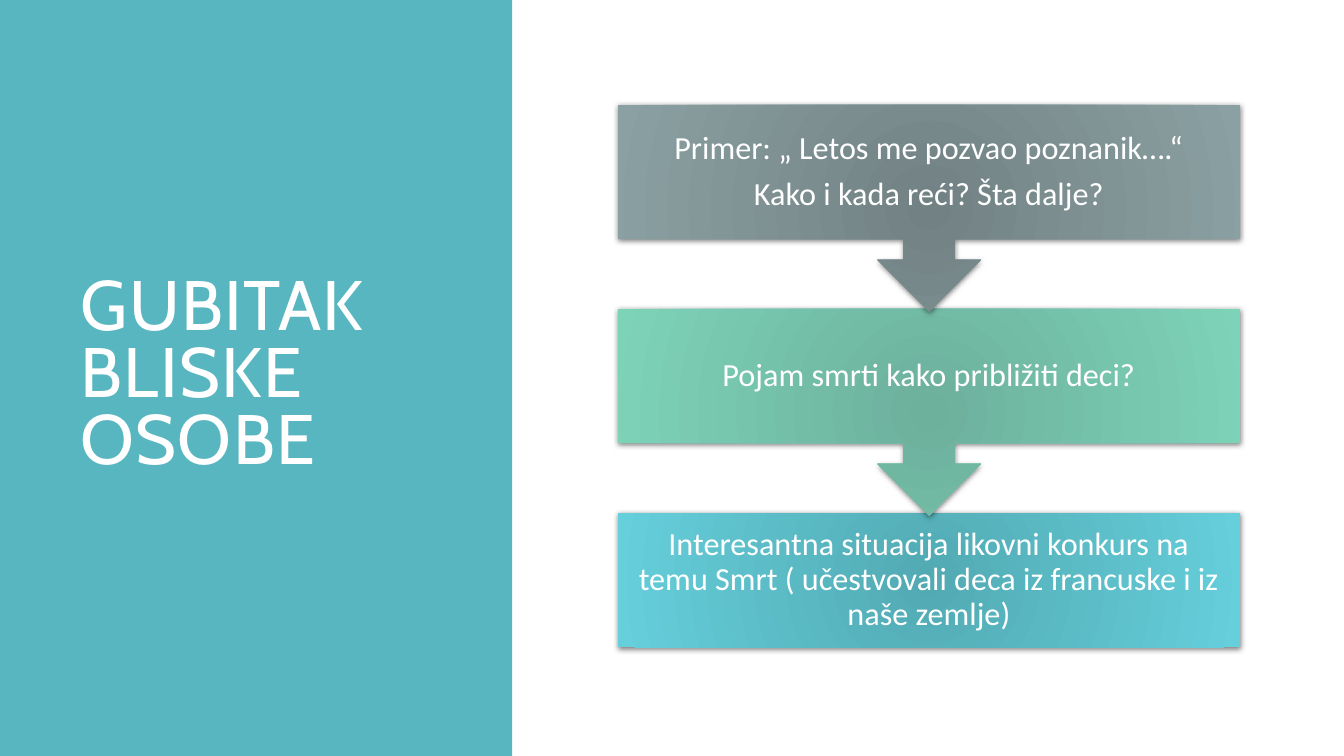
from lxml import etree
from pptx import Presentation
from pptx.dml.color import RGBColor
from pptx.enum.shapes import MSO_SHAPE
from pptx.enum.text import MSO_ANCHOR, MSO_AUTO_SIZE, PP_ALIGN
from pptx.oxml.ns import qn
from pptx.util import Inches, Pt

RECT, ARROW = MSO_SHAPE.RECTANGLE, MSO_SHAPE.UP_ARROW_CALLOUT
MIDDLE, NO_FIT = MSO_ANCHOR.MIDDLE, MSO_AUTO_SIZE.NONE
LEFT, CENTER = PP_ALIGN.LEFT, PP_ALIGN.CENTER
WHITE, TEAL = "FFFFFF", "58B6C0"
STEPS = [
    (["Primer: „ Letos me pozvao poznanik….“", "Kako i kada reći? Šta dalje?"],
     ("728284", "8BA0A2")),
    (["Pojam smrti kako približiti deci?"], ("6DB09C", "7DD3B8")),
    (["Interesantna situacija likovni konkurs na temu Smrt "
      "( učestvovali deca iz francuske i iz naše zemlje)"], ("52AAB3", "65CFDB")),
]


def color(code):
    """Turn a hex string into a colour."""
    return RGBColor.from_string(code)


def style(para, face, size, align, pitch):
    """Set the font, alignment and line spacing of a paragraph."""
    para.font.name, para.font.size = face, Pt(size)
    para.font.color.rgb = color(WHITE)
    para.alignment, para.line_spacing = align, pitch


def add_shape(slide, kind, box):
    """Add a shape without line or shadow."""
    shape = slide.shapes.add_shape(kind, *map(Inches, box))
    shape.line.fill.background()
    shape.shadow.inherit = False
    return shape


def add_glow(shape, shades):
    """Give a shape a round gradient and a soft shadow."""
    shape.fill.gradient()
    for stop, shade, place in zip(shape.fill.gradient_stops, shades, (0, 1)):
        stop.color.rgb, stop.position = color(shade), place
    props = shape._element.spPr
    grad = props.find(qn("a:gradFill"))
    grad.remove(grad.find(qn("a:lin")))
    round_ = etree.SubElement(grad, qn("a:path"), path="circle")
    etree.SubElement(round_, qn("a:fillToRect"), dict.fromkeys("ltrb", "100000"))
    shadow = etree.SubElement(
        props.find(qn("a:effectLst")), qn("a:outerShdw"), blurRad=str(Pt(4)),
        dist=str(Pt(1)), dir="5400000", rotWithShape="0")
    black = etree.SubElement(shadow, qn("a:srgbClr"), val="000000")
    etree.SubElement(black, qn("a:alpha"), val="50000")


def add_panel(slide, box):
    """Place the coloured side panel and the title on it."""
    left, top, width, height = box
    panel = add_shape(slide, RECT, box)
    panel.fill.solid()
    panel.fill.fore_color.rgb = color(TEAL)
    slide.shapes._spTree.insert(2, panel._element)
    title = slide.shapes.title
    title.left, title.top = Inches(left + 0.7), Inches(top + 0.7)
    title.width, title.height = Inches(width - 1.34), Inches(height - 1.41)
    frame = title.text_frame
    frame.text = "GUBITAK BLISKE OSOBE"
    frame.word_wrap, frame.auto_size = True, NO_FIT
    frame.vertical_anchor = MIDDLE
    para = frame.paragraphs[0]
    style(para, "Cabin", 50, LEFT, 0.8)
    para.runs[0].font._element.set("spc", "100")


def add_label(slide, box, lines):
    """Add the centred text of one step."""
    frame = slide.shapes.add_textbox(*map(Inches, box)).text_frame
    frame.text = "\n".join(lines)
    frame.word_wrap, frame.vertical_anchor = True, MIDDLE
    frame.margin_left = frame.margin_right = Inches(0.18)
    frame.margin_top = frame.margin_bottom = Inches(0.18)
    for para in frame.paragraphs:
        style(para, "Calibri", 23, CENTER, 0.9)
        para.space_after = Pt(8)


def add_flow(slide, box):
    """Stack the steps from the bottom up, each pointing to the next."""
    left, top, width, height = box
    body, arrow = 1.33, 2.05
    last = len(STEPS) - 1
    pitch = (height - body) / last
    for i, (lines, shades) in reversed(list(enumerate(STEPS))):
        y = top + i * pitch
        kind, tall = (RECT, body) if i == last else (ARROW, arrow)
        shape = add_shape(slide, kind, (left, y, width, tall))
        shape.rotation = 0 if i == last else 180
        add_glow(shape, shades)
        add_label(slide, (left, y, width, body), lines)


def main():
    """Build and save the slide."""
    deck = Presentation()
    deck.slide_width, deck.slide_height = Inches(13.33), Inches(7.5)
    slide = deck.slides.add_slide(deck.slide_layouts[5])
    add_panel(slide, (0, 0, 5.08, 7.5))
    add_flow(slide, (6.13, 1.04, 6.17, 5.38))
    deck.save("out.pptx")


if __name__ == "__main__":
    main()
